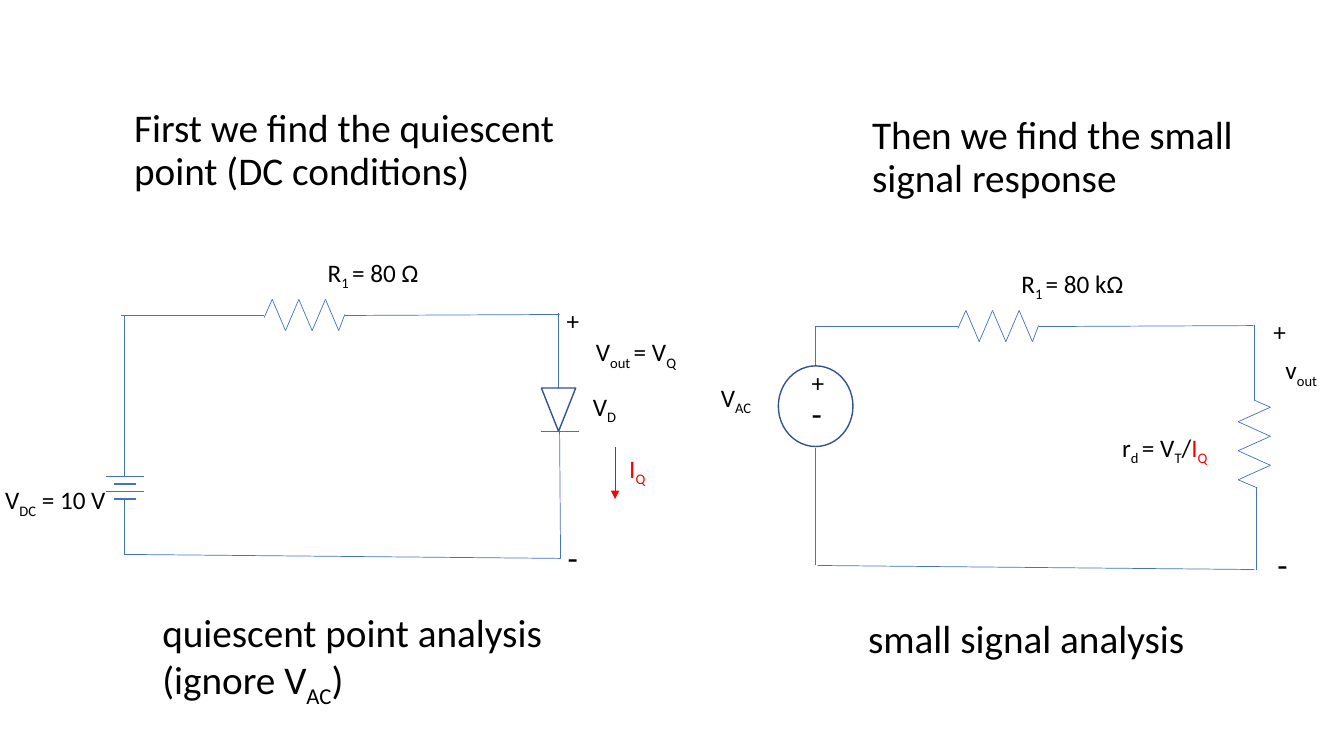
import pptx
import pptx.util
import pptx.dml.color
import pptx.enum.shapes
import pptx.oxml.ns
import lxml.etree

deck = pptx.Presentation()
deck.slide_width = pptx.util.Inches(13.33)
deck.slide_height = pptx.util.Inches(7.5)
slide = deck.slides.add_slide(deck.slide_layouts[6])
CELL = deck.slide_height / 75
WIRE, OUTLINE, RED, BLACK = "4472C4", "325491", "FF0000", "000000"
color = pptx.dml.color.RGBColor.from_string


def draw_wire(points, weight=0.5, stroke=WIRE):
    for start, end in zip(points, points[1:]):
        wire = slide.shapes.add_connector(
            pptx.enum.shapes.MSO_CONNECTOR.STRAIGHT,
            *[round(value * CELL) for value in (*start, *end)])
        wire.line.width = pptx.util.Pt(weight)
        wire.line.color.rgb = color(stroke)
        lxml.etree.SubElement(wire._element.spPr, pptx.oxml.ns.qn("a:effectLst"))
    return wire


def write(left, top, width, height, wording, size, red_from=99):
    box = slide.shapes.add_textbox(*[round(value * CELL) for value in (left, top, width, height)])
    frame = box.text_frame
    frame.word_wrap = True
    frame.margin_left = frame.margin_right = pptx.util.Inches(0.05)
    paragraph = frame.paragraphs[0]
    for order, part in enumerate(wording.split("|")):
        if not part:
            continue
        run = paragraph.add_run()
        run.text = part
        run.font.name = "Calibri"
        run.font.size = pptx.util.Pt(size)
        run.font.color.rgb = color(RED if order >= red_from else BLACK)
        if order % 2:
            run.font._element.set("baseline", "-25000")
    return paragraph


for left, top, width, height, wording in [
    (12.8, 10.3, 43.2, 10.5, "First we find the quiescent point (DC conditions)"),
    (86, 11, 43.2, 10.5, "Then we find the small signal response"),
    (15.6, 60.4, 43.2, 10.5, "quiescent point analysis (ignore V|AC|)"),
    (85.6, 61, 36.5, 6.1, "small signal analysis"),
]:
    heading = write(left, top, width, height, wording, 28)
    heading.line_spacing = 0.9
    heading.space_before = pptx.util.Pt(10)

for dx, dy in [(0, 0), (68.8, 1.1)]:
    teeth = [(27.0 + 1.32 * tooth, 32.8 if tooth % 2 else 29.7) for tooth in range(6)]
    series_resistor = [(26.2, 31.5), *teeth, (34.2, 31.2)]
    for route in [
        [(12, 31.3), (26.2, 31.3)],
        series_resistor,
        [(34.2, 31.3), (55.5, 31.2)],
        [(12.3, 55), (55.6, 55.4)],
    ]:
        draw_wire([(x + dx, y + dy) for x, y in route])

shunt_teeth = [(126 if tooth % 2 else 122.8, 47.6 - 1.44 * tooth) for tooth in range(6)]
for route in [
    [(12.3, 31.3), (12.3, 47.3)],
    [(12.3, 49.5), (12.3, 55)],
    [(55.4, 31.1), (55.4, 38.5)],
    [(55.5, 42.8), (55.6, 55.4)],
    [(53.7, 42.8), (57.4, 42.8)],
    [(80.9, 32.4), (80.9, 36.3)],
    [(80.9, 44.4), (80.9, 56.1)],
    [(124.4, 32.2), (124.4, 39.7)],
    [(124.7, 48.4), *shunt_teeth, (124.4, 39.7)],
    [(124.6, 48.4), (124.6, 56.5)],
]:
    draw_wire(route)

for plate in range(4):
    reach = 1.1 if plate % 2 else 1.85
    y = 47.3 + 0.73 * plate
    draw_wire([(12.4 - reach, y), (12.4 + reach, y)], 1)

current_arrow = draw_wire([(61, 44.3), (61, 49.5)], 0.5, RED)
lxml.etree.SubElement(current_arrow.line._get_or_add_ln(),
                      pptx.oxml.ns.qn("a:tailEnd"), type="triangle")

presets = pptx.enum.shapes.MSO_SHAPE
for preset, bounds in [
    (presets.FLOWCHART_MERGE, (53.7, 38.5, 3.4, 4.3)),
    (presets.OVAL, (77.2, 36.3, 7.4, 8)),
]:
    component = slide.shapes.add_shape(preset, *[round(value * CELL) for value in bounds])
    component.shadow.inherit = False
    component.fill.background()
    component.line.width = pptx.util.Pt(1)
    component.line.color.rgb = color(OUTLINE)

for left, top, width, wording, red_from in [
    (0, 47.6, 12.3, "V|DC| = 10 V", 99),
    (32, 25, 15.9, "R|1 |= 80 Ω", 99),
    (58.3, 38.3, 4.8, "V|D", 99),
    (58.6, 32.9, 11.9, "V|out |= V|Q", 99),
    (61.9, 44.5, 4.8, "I|Q", 0),
    (71, 37.4, 6.7, "V|AC", 99),
    (100.8, 26.1, 16, "R|1 |= 80 kΩ", 99),
    (110.8, 42.4, 12.1, "r|d |= V|T|/||I|Q", 6),
    (127, 34.7, 6.3, "v|out", 99),
]:
    write(left, top, width, 4, wording, 18, red_from)

for left, plus_top, minus_left, minus_top in [
    (55.7, 29.8, 55.8, 52.8),
    (80, 35.9, 80, 38.5),
    (125.8, 30.9, 126.2, 53.5),
]:
    write(left, plus_top, 3.4, 4, "+", 18)
    write(minus_left, minus_top, 3.4, 5, "-", 24)

deck.save("out.pptx")
